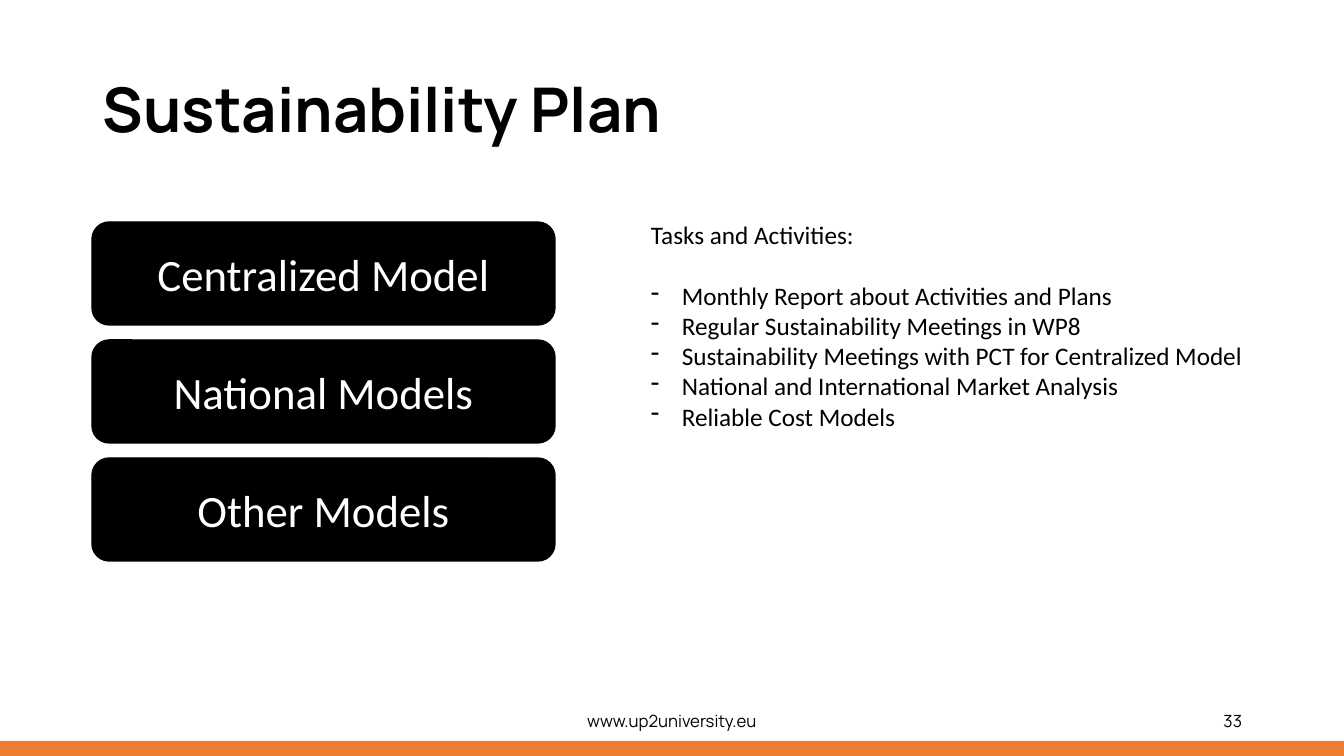
from lxml import etree
from pptx import Presentation
from pptx.dml.color import RGBColor
from pptx.enum.shapes import MSO_SHAPE
from pptx.enum.text import MSO_ANCHOR, PP_ALIGN
from pptx.oxml.ns import qn
from pptx.util import Emu, Pt

RECT = MSO_SHAPE.RECTANGLE
ROUND = MSO_SHAPE.ROUNDED_RECTANGLE
TOP = MSO_ANCHOR.TOP
MIDDLE = MSO_ANCHOR.MIDDLE
LEFT = PP_ALIGN.LEFT
CENTER = PP_ALIGN.CENTER
RIGHT = PP_ALIGN.RIGHT

BLACK = "000000"
WHITE = "FFFFFF"
ORANGE = "ED7D31"

HEAD = {"name": "Manrope", "size": Pt(44), "bold": True}
FOOT = {"name": "Manrope", "size": Pt(12)}
LABEL = {"name": "Calibri", "size": Pt(32)}
BODY = {"name": "Calibri", "size": Pt(18)}

MODELS = ["Centralized Model", "National Models", "Other Models"]
TASKS = [
    "Monthly Report about Activities and Plans",
    "Regular Sustainability Meetings in WP8",
    "Sustainability Meetings with PCT for Centralized Model",
    "National and International Market Analysis",
    "Reliable Cost Models",
]


def px(n):
    return Emu(round(n * 914400 / 100.8))


def paint(color, tone):
    color.rgb = RGBColor.from_string(tone)


def style(item, look):
    for key, value in look.items():
        setattr(item, key, value)


def write(para, text, look, tone=BLACK, align=LEFT):
    para.text = text
    para.alignment = align
    style(para.font, look)
    paint(para.font.color, tone)


def add_text(slide, area, text, look, align=LEFT, anchor=MIDDLE):
    box = slide.shapes.add_textbox(*map(px, area))
    frame = box.text_frame
    style(frame, {"word_wrap": True, "vertical_anchor": anchor})
    write(frame.paragraphs[0], text, look, align=align)
    return frame


def add_block(slide, kind, area, tone):
    block = slide.shapes.add_shape(kind, *map(px, area))
    block.shadow.inherit = False
    block.fill.solid()
    paint(block.fill.fore_color, tone)
    block.line.fill.background()
    return block


def add_model(slide, area, text):
    block = add_block(slide, ROUND, area, BLACK)
    block.line.width = Pt(1)
    paint(block.line.color, BLACK)
    frame = block.text_frame
    style(frame, {"word_wrap": True, "vertical_anchor": MIDDLE})
    write(frame.paragraphs[0], text, LABEL, WHITE, CENTER)


def add_task(frame, text, gap):
    para = frame.add_paragraph()
    props = para._p.get_or_add_pPr()
    props.set("marL", str(px(31)))
    props.set("indent", str(px(-31)))
    etree.SubElement(props, qn("a:buChar")).set("char", "-")
    para.space_before = gap
    write(para, text, BODY)


def main():
    deck = Presentation()
    style(deck, {"slide_width": px(1344), "slide_height": px(756)})
    slide = deck.slides.add_slide(deck.slide_layouts[6])

    add_block(slide, RECT, (0, 741, 1344, 15), ORANGE)
    title = add_text(slide, (93, 40, 1016, 146), "Sustainability Plan", HEAD)
    title.paragraphs[0].line_spacing = 0.9
    add_text(slide, (445, 701, 454, 40), "www.up2university.eu", FOOT, CENTER)
    add_text(slide, (950, 701, 302, 40), "33", FOOT, RIGHT)

    for row, model in enumerate(MODELS):
        add_model(slide, (92, 222 + row * 118, 463, 103), model)

    tasks = add_text(slide, (641, 214, 645, 254), "Tasks and Activities:", BODY, anchor=TOP)
    for row, task in enumerate(TASKS):
        add_task(tasks, task, Pt(0 if row else 22))

    deck.save("out.pptx")


if __name__ == "__main__":
    main()
